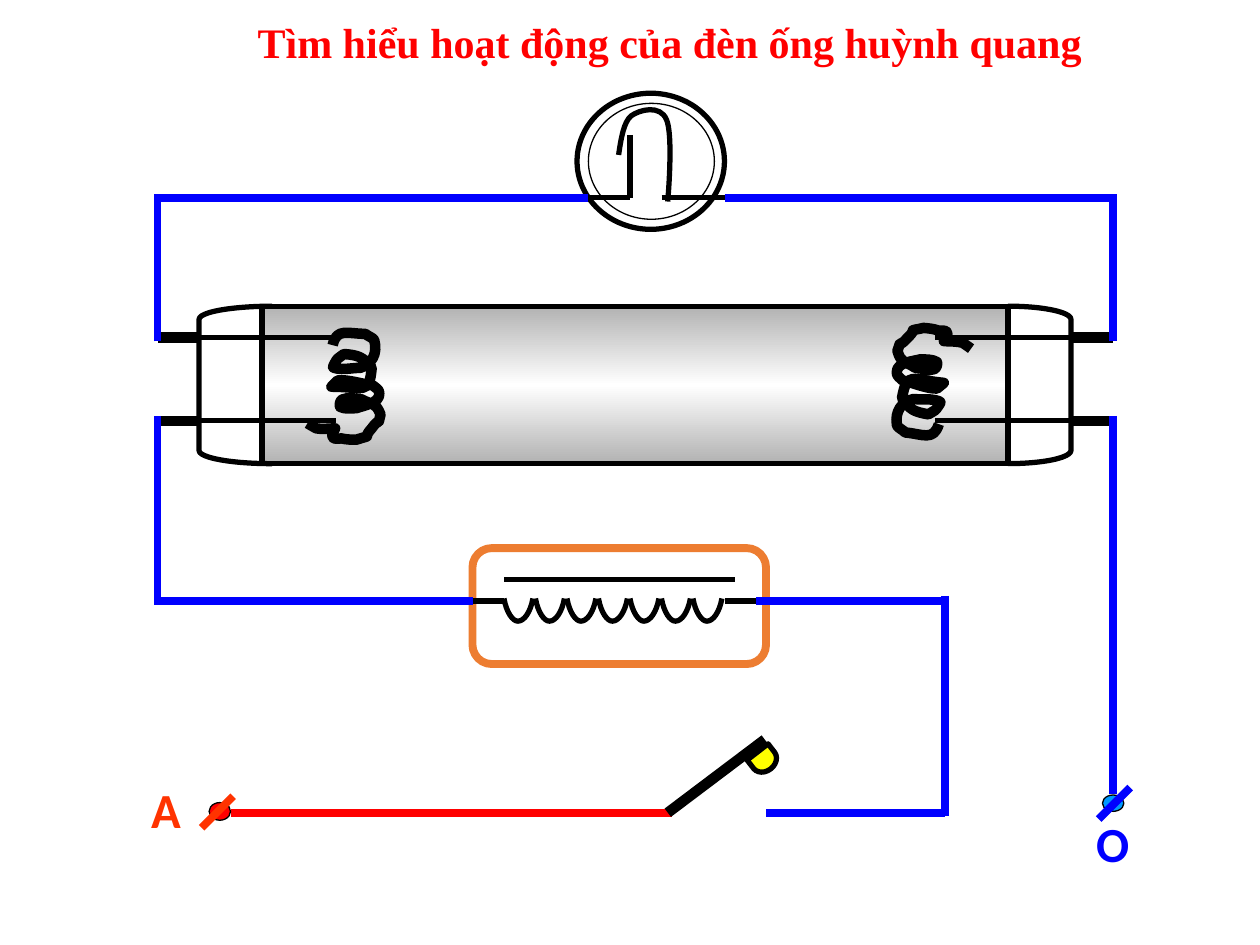
from copy import deepcopy
from math import cos, radians, sin

from pptx import Presentation
from pptx.dml.color import RGBColor
from pptx.enum.shapes import MSO_CONNECTOR, MSO_SHAPE
from pptx.enum.text import PP_ALIGN
from pptx.oxml.ns import qn
from pptx.oxml.xmlchemy import OxmlElement
from pptx.util import Inches, Pt

THEME = {
    "black": "000000", "white": "FFFFFF", "shade": "B2B2B2",
    "blue": "0000FF", "red": "FF0000", "orange_red": "FF3300",
    "case": "ED7D31", "sky": "0099FF", "yellow": "FFFF00",
    "title_font": "Times New Roman", "label_font": "Calibri",
    "title_size": 24, "label_size": 28,
    "hair": 0.75, "thin": 3, "wire": 4.5, "thick": 6,
}

# Content: text and terminals
TITLE = "Tìm hiểu hoạt động của đèn ống huỳnh quang"
LABELS = [("A", (1.1, 6.14), "orange_red"), ("O", (8.6, 6.41), "blue")]
TERMINALS = [  # dot box, dot colour, slash start, slash colour
    ((8.75, 6.31, 0.17, 0.13), "sky", (8.72, 6.5), "blue"),
    ((1.66, 6.37, 0.17, 0.14), "red", (1.6, 6.57), "orange_red"),
]

# Content: straight lines as (x1, y1, x2, y2)
PIN_ROWS = (2.68, 3.34)
PINS = [(1.25, 1.58), (8.5, 8.83)]
LEADS = [(1.58, 2.67), (7.42, 8.5)]
STARTER_LINES = [(4.58, 1.57, 5, 1.57), (5, 1.07, 5, 1.57), (5.25, 1.57, 5.75, 1.57)]
CHOKE_LINES = [(4, 4.6, 5.83, 4.6), (3.75, 4.77, 4, 4.77), (5.75, 4.77, 6.08, 4.77)]
LIVE_WIRE = (1.83, 6.45, 5.33, 6.45)
BLUE_WIRES = [
    (1.25, 2.71, 1.25, 1.54), (1.25, 1.57, 4.67, 1.57),
    (8.83, 2.71, 8.83, 1.54), (5.75, 1.57, 8.83, 1.57),
    (1.25, 3.3, 1.25, 4.8), (1.25, 4.77, 3.75, 4.77),
    (8.83, 3.3, 8.83, 6.3), (6.08, 6.45, 7.5, 6.45),
    (6, 4.77, 7.5, 4.77), (7.5, 4.73, 7.5, 6.48),
]

# Content: Bezier curves, a start point and then three points per segment
BIMETAL = [(4.91, 1.23), (4.93, 1.1), (4.95, 0.97), (5.01, 0.92), (5.08, 0.87),
           (5.24, 0.83), (5.29, 0.95), (5.34, 1.06), (5.31, 1.49), (5.3, 1.6)]
CHOKE_TURN = [(0.23, 4.75), (0.21, 4.86), (0.16, 4.93), (0.11, 4.93),
              (0.07, 4.93), (0.02, 4.86), (0, 4.75)]
CHOKE_TURNS, CHOKE_LEFT, CHOKE_PITCH = 7, 4, 0.25
FILAMENT = [
    (2.64, 2.74), (2.67, 2.6), (2.76, 2.65), (2.9, 2.65), (2.92, 2.67), (2.96, 2.68),
    (2.97, 2.7), (3, 2.81), (2.95, 2.89), (2.86, 2.92), (2.79, 2.92), (2.72, 2.94),
    (2.65, 2.92), (2.63, 2.92), (2.66, 2.88), (2.67, 2.86), (2.68, 2.84), (2.71, 2.83),
    (2.73, 2.81), (2.84, 2.82), (2.88, 2.83), (2.95, 2.92), (2.93, 3.14), (2.89, 3.07),
    (2.63, 3.07), (2.65, 3.06), (2.66, 3.03), (2.68, 3.02), (2.76, 3.01), (2.88, 3.05),
    (2.96, 3.06), (2.98, 3.08), (3.01, 3.09), (3.01, 3.12), (3.02, 3.2), (2.88, 3.22),
    (2.83, 3.24), (2.79, 3.24), (2.74, 3.25), (2.7, 3.23), (2.69, 3.22), (2.7, 3.17),
    (2.72, 3.17), (2.76, 3.15), (2.82, 3.17), (2.87, 3.17), (2.96, 3.22), (2.98, 3.19),
    (3.02, 3.29), (2.99, 3.41), (3.03, 3.29), (2.95, 3.4), (2.86, 3.5), (2.98, 3.44),
    (2.83, 3.49), (2.79, 3.49), (2.75, 3.49), (2.71, 3.48), (2.69, 3.48), (2.65, 3.49),
    (2.64, 3.47), (2.63, 3.45), (2.65, 3.42), (2.66, 3.4), (2.61, 3.4), (2.56, 3.41),
    (2.51, 3.4), (2.49, 3.39), (2.44, 3.36), (2.44, 3.36),
]
FILAMENT_CENTRES, FILAMENT_TURN = ((2.73, 3.05), (7.39, 3.05)), 185.2


def colour(name):
    return RGBColor.from_string(THEME[name])


def outline(item, ink, weight):
    item.line.color.rgb = colour(ink)
    item.line.width = Pt(THEME[weight])


def add_line(shapes, ends, ink="black", weight="thin"):
    wire = shapes.add_connector(MSO_CONNECTOR.STRAIGHT, *map(Inches, ends))
    outline(wire, ink, weight)
    wire._element.spPr.append(OxmlElement("a:effectLst"))


def add_shape(shapes, kind, box, fill=None, ink="black", weight="thin", adjust=None, turn=0):
    part = shapes.add_shape(kind, *map(Inches, box))
    part.shadow.inherit = False
    part.rotation = turn
    if fill:
        part.fill.solid()
        part.fill.fore_color.rgb = colour(fill)
    else:
        part.fill.background()
    if adjust is not None:
        part.adjustments[0] = adjust
    outline(part, ink, weight)
    return part


def add_curve(shapes, points, weight="thin"):
    start, *rest = [(Inches(x), Inches(y)) for x, y in points]
    builder = shapes.build_freeform(*start)
    builder.add_line_segments(rest, close=False)
    curve = builder.convert_to_shape()
    curve.shadow.inherit = False
    curve.fill.background()
    outline(curve, "black", weight)
    # Merge every three straight segments into one Bezier segment
    segments = list(curve._element.iter(qn("a:lnTo")))
    for first in range(0, len(segments), 3):
        bezier = OxmlElement("a:cubicBezTo")
        segments[first].addprevious(bezier)
        for segment in segments[first:first + 3]:
            bezier.append(segment[0])
            segment.getparent().remove(segment)


def add_text(shapes, text, box, *, font, size, ink, align=PP_ALIGN.LEFT):
    frame = shapes.add_textbox(*map(Inches, box)).text_frame
    frame.word_wrap = True
    paragraph = frame.paragraphs[0]
    paragraph.alignment = align
    run = paragraph.add_run()
    run.text = text
    run.font.name, run.font.size, run.font.bold = THEME[font], Pt(THEME[size]), True
    run.font.color.rgb = colour(ink)


def shade_tube(tube):
    tube.fill.gradient()
    tube.fill.gradient_angle = 90
    stops = tube._element.spPr.find(".//" + qn("a:gsLst"))
    stops.insert(1, deepcopy(stops[0]))
    for stop, (position, name) in zip(
            tube.fill.gradient_stops, [(0, "shade"), (0.5, "white"), (1, "shade")]):
        stop.position = position
        stop.color.rgb = colour(name)


def turned(points, centre, new_centre, angle):
    c, s = cos(radians(angle)), sin(radians(angle))
    offsets = [(x - centre[0], y - centre[1]) for x, y in points]
    return [(new_centre[0] + x * c - y * s, new_centre[1] + x * s + y * c)
            for x, y in offsets]


def main():
    deck = Presentation()
    deck.slide_width, deck.slide_height = Inches(10), Inches(7.5)
    shapes = deck.slides.add_slide(deck.slide_layouts[6]).shapes

    # Tube with its end caps
    shade_tube(add_shape(shapes, MSO_SHAPE.RECTANGLE, (2.08, 2.43, 5.92, 1.25)))
    add_shape(shapes, MSO_SHAPE.RIGHT_BRACKET, (8, 2.43, 0.5, 1.25), adjust=0.208)
    add_shape(shapes, MSO_SHAPE.RIGHT_BRACKET, (1.58, 2.43, 0.58, 1.25), adjust=0.179, turn=180)

    # Pins, leads and filaments
    for y in PIN_ROWS:
        for spans, weight in ((PINS, "thick"), (LEADS, "thin")):
            for left, right in spans:
                add_line(shapes, (left, y, right, y), weight=weight)
    left_centre, right_centre = FILAMENT_CENTRES
    add_curve(shapes, FILAMENT, "thick")
    add_curve(shapes, turned(FILAMENT, left_centre, right_centre, FILAMENT_TURN), "thick")

    # Starter
    add_shape(shapes, MSO_SHAPE.OVAL, (4.58, 0.74, 1.17, 1.08), "white")
    add_shape(shapes, MSO_SHAPE.OVAL, (4.67, 0.82, 1, 0.92), "white", weight="hair")
    add_curve(shapes, BIMETAL)

    # Choke
    add_shape(shapes, MSO_SHAPE.FLOWCHART_ALTERNATE_PROCESS, (3.75, 4.35, 2.33, 0.92),
              "white", "case", "wire")
    for ends in STARTER_LINES + CHOKE_LINES:
        add_line(shapes, ends)
    for turn in range(CHOKE_TURNS):
        left = CHOKE_LEFT + turn * CHOKE_PITCH
        add_curve(shapes, [(left + x, y) for x, y in CHOKE_TURN])

    # Wires and terminals
    add_line(shapes, LIVE_WIRE, "red", "wire")
    for ends in BLUE_WIRES:
        add_line(shapes, ends, "blue", "wire")
    for dot, fill, (x, y), ink in TERMINALS:
        add_shape(shapes, MSO_SHAPE.OVAL, dot, fill, weight="hair")
        add_line(shapes, (x, y, x + 0.25, y - 0.25), ink, "wire")

    # Switch
    switch = shapes.add_group_shape().shapes
    add_line(switch, (6.07, 5.87, 5.3, 6.45), weight="thick")
    knob = add_shape(switch, MSO_SHAPE.FLOWCHART_DELAY, (5.98, 5.93, 0.17, 0.21),
                     "yellow", turn=232.2)
    knob._element.spPr.xfrm.set("flipH", "1")

    # Labels and title
    for label, (x, y), ink in LABELS:
        add_text(shapes, label, (x, y, 0.42, 0.57),
                 font="label_font", size="label_size", ink=ink)
    add_text(shapes, TITLE, (0.75, 0.08, 9.13, 0.5), font="title_font",
             size="title_size", ink="red", align=PP_ALIGN.CENTER)
    deck.save("out.pptx")


if __name__ == "__main__":
    main()
